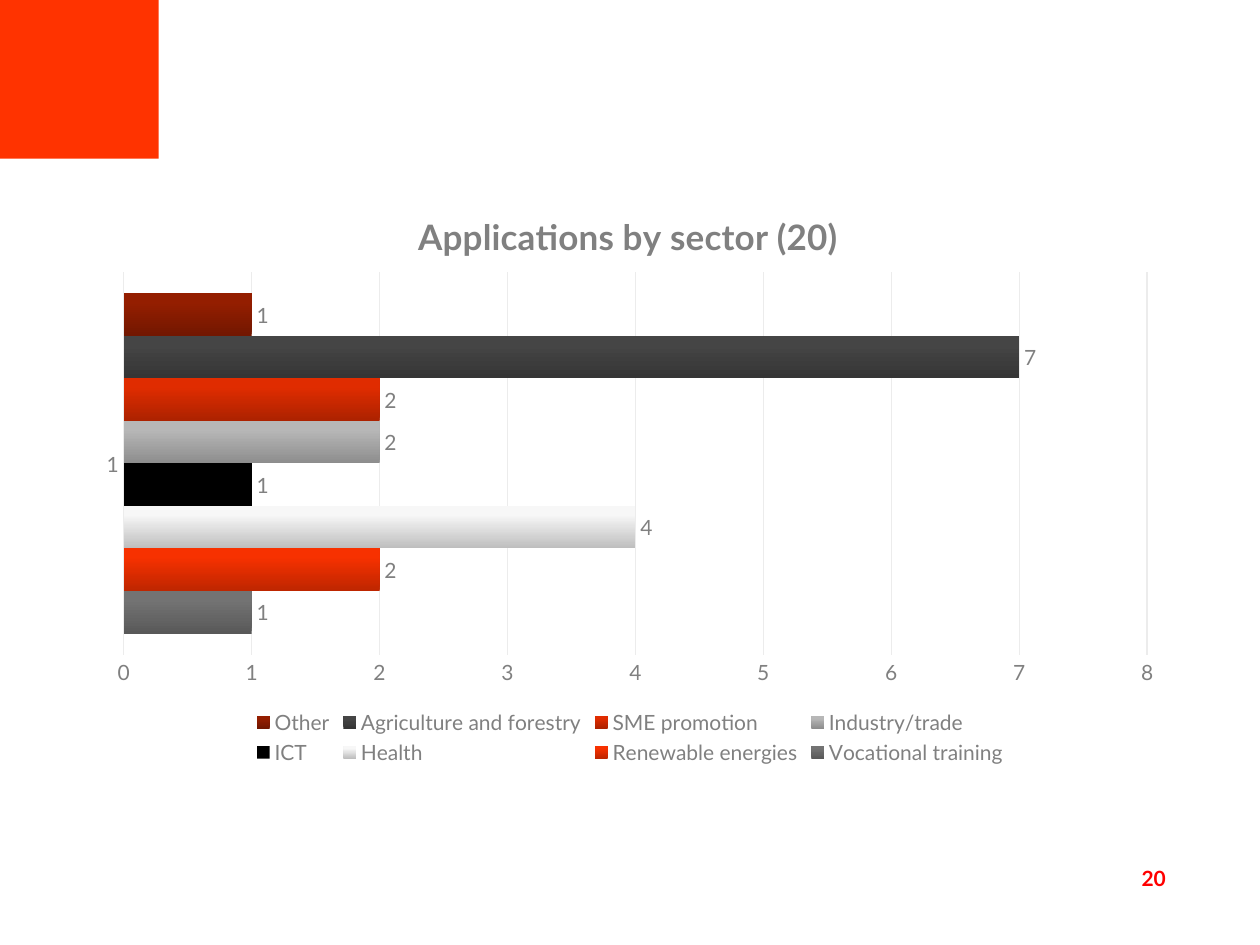
"""Build the slide with the bar chart of applications by sector."""
from lxml import etree
from pptx import Presentation
from pptx import util as u
from pptx.chart.data import CategoryChartData
from pptx.dml.color import RGBColor
from pptx.enum import chart as ch, shapes, text
from pptx.oxml.ns import qn

COLORS = {"block": "FF3300", "number": "FF0000", "label": "808080", "grid": "ECECEC"}
FONT = "Lato"
SECTORS = [
    ("Vocational training", 1, "595959", "737373"),
    ("Renewable energies", 2, "BE2600", "F73100"),
    ("Health", 4, "BEBEBE", "F7F7F7"),
    ("ICT", 1, "000000", None),
    ("Industry/trade", 2, "8D8D8D", "B7B7B7"),
    ("SME promotion", 2, "AC2200", "E02C00"),
    ("Agriculture and forestry", 7, "353535", "454545"),
    ("Other", 1, "721700", "941E00"),
]


def set_font(font, size, color, bold=False):
    font.name, font.size, font.bold = FONT, u.Pt(size), bold
    font.color.rgb = RGBColor.from_string(color)


def set_layout(parent, index, **values):
    for old in parent.findall(qn("c:layout")):
        parent.remove(old)
    layout = etree.Element(qn("c:layout"))
    manual = etree.SubElement(layout, qn("c:manualLayout"))
    for tag, val in values.items():
        etree.SubElement(manual, qn("c:" + tag)).set("val", str(val))
    parent.insert(index, layout)


prs = Presentation()
prs.slide_width, prs.slide_height = u.Inches(10), u.Inches(7.5)
s = prs.slides.add_slide(prs.slide_layouts[6])

sp = s.shapes.add_shape(shapes.MSO_SHAPE.RECTANGLE, 0, 0, u.Inches(1.26), u.Inches(1.26))
sp.shadow.inherit = False
sp.fill.solid()
sp.fill.fore_color.rgb = RGBColor.from_string(COLORS["block"])
sp.line.fill.background()

data = CategoryChartData()
data.categories = ["1"]
for name, value, _, _ in SECTORS:
    data.add_series(name, [value])
chart = s.shapes.add_chart(
    ch.XL_CHART_TYPE.BAR_CLUSTERED, u.Inches(0.67), u.Inches(1.39),
    u.Inches(8.66), u.Inches(4.72), data).chart
set_font(chart.font, 12, COLORS["label"])

chart.has_title = True
r = chart.chart_title.text_frame.paragraphs[0].add_run()
r.text = "Applications by sector (20)"
set_font(r.font, 20, COLORS["label"], True)
set_layout(chart.chart_title._element, 1, xMode="edge", yMode="edge", x=0.3, y=0.05)
set_layout(chart._chartSpace.chart.plotArea, 0, layoutTarget="inner", xMode="edge",
           yMode="edge", x=0.036, y=0.163, w=0.938, h=0.644)

chart.has_legend = True
chart.legend.position = ch.XL_LEGEND_POSITION.BOTTOM
chart.legend.include_in_layout = False
set_font(chart.legend.font, 12, COLORS["label"])

for axis in (chart.category_axis, chart.value_axis):
    axis.major_tick_mark = axis.minor_tick_mark = ch.XL_TICK_MARK.NONE
    set_font(axis.tick_labels.font, 12, COLORS["label"])
chart.value_axis.minimum_scale, chart.value_axis.maximum_scale = 0, 8
chart.value_axis.major_unit = 1
chart.value_axis.format.line.fill.background()
chart.category_axis.has_major_gridlines = False
for line in (chart.category_axis.format.line, chart.value_axis.major_gridlines.format.line):
    line.color.rgb = RGBColor.from_string(COLORS["grid"])
    line.width = u.Pt(0.75)

plot = chart.plots[0]
plot.gap_width, plot.overlap, plot.vary_by_categories = 100, 0, False
for series, (_, _, dark, light) in zip(plot.series, SECTORS):
    fill = series.format.fill
    if light:
        fill.gradient()
        fill.gradient_angle = 90
        for stop, color, position in zip(fill.gradient_stops, (dark, light), (0, 0.8)):
            stop.color.rgb = RGBColor.from_string(color)
            stop.position = position
    else:
        fill.solid()
        fill.fore_color.rgb = RGBColor.from_string(dark)
    labels = series.data_labels
    labels.show_value = True
    labels.position = ch.XL_LABEL_POSITION.OUTSIDE_END
    set_font(labels.font, 12, COLORS["label"])

tf = s.shapes.add_textbox(u.Inches(9.06), u.Inches(6.77), u.Inches(0.68), u.Inches(0.4)).text_frame
tf.word_wrap = True
tf.margin_left = tf.margin_right = tf.margin_top = tf.margin_bottom = 0
tf.vertical_anchor = text.MSO_ANCHOR.MIDDLE
r = tf.paragraphs[0].add_run()
r.text = "20"
set_font(r.font, 12, COLORS["number"], True)

prs.save("out.pptx")
